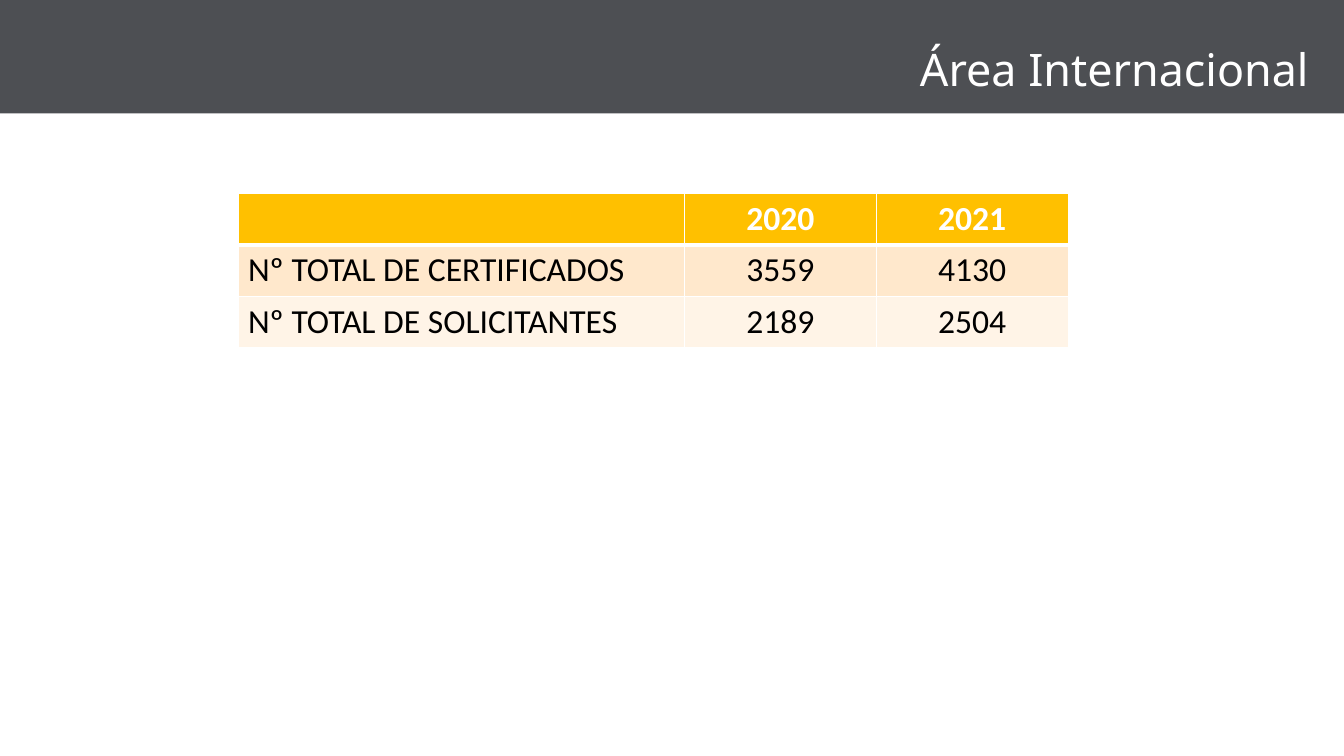
from pptx import Presentation
from pptx.dml.color import RGBColor
from pptx.enum.shapes import MSO_SHAPE as Shape
from pptx.enum.text import PP_ALIGN as Align
from pptx.oxml import parse_xml
from pptx.oxml.ns import nsdecls
from pptx.util import Pt


def color(code):
    return RGBColor.from_string(code)


def write(para, text, align, style):
    para.alignment = align
    run = para.add_run()
    run.text = text
    run.font.color.rgb = color(style["color"])
    for key in ("name", "size", "bold"):
        setattr(run.font, key, style[key])


deck = Presentation()
deck.slide_width, deck.slide_height = Pt(960), Pt(540)
slide = deck.slides.add_slide(deck.slide_layouts[6])
shapes = slide.shapes

# Header band
band = shapes.add_shape(Shape.RECTANGLE, 0, 0, Pt(960), Pt(81))
band.shadow.inherit = False
band.fill.solid()
band.fill.fore_color.rgb = color("4D4F53")
band.line.fill.background()

# Table of totals
rows = [
    ("", "2020", "2021"),
    ("Nº TOTAL DE CERTIFICADOS", "3559", "4130"),
    ("Nº TOTAL DE SOLICITANTES", "2189", "2504"),
]
fills = ["FFC000", "FFE8CC", "FFF4E7"]
widths = [319, 137, 137]
head = {"name": "Calibri", "size": Pt(24), "bold": True, "color": "FFFFFF"}
body = {**head, "bold": False, "color": "000000"}

table = shapes.add_table(3, 3, Pt(170), Pt(138.5), Pt(593), Pt(108)).table
for col, width in zip(table.columns, widths):
    col.width = Pt(width)

for r, (row, fill) in enumerate(zip(rows, fills)):
    table.rows[r].height = Pt(36)
    for c, text in enumerate(row):
        cell = table.cell(r, c)
        # White borders, thicker under the header row
        thick = {0: "lnB", 1: "lnT"}.get(r)
        props = cell._tc.get_or_add_tcPr()
        for side in ("lnL", "lnR", "lnT", "lnB"):
            size = Pt(3 if side == thick else 1)
            props.append(parse_xml(
                f'<a:{side} {nsdecls("a")} w="{size}"><a:solidFill>'
                f'<a:srgbClr val="FFFFFF"/></a:solidFill></a:{side}>'))
        cell.fill.solid()
        cell.fill.fore_color.rgb = color(fill)
        if text:
            write(cell.text_frame.paragraphs[0], text,
                  Align.CENTER if c else Align.LEFT, body if r else head)

# Title
box = shapes.add_textbox(Pt(633), Pt(26.5), Pt(309), Pt(46))
box.text_frame.word_wrap = True
title = {"name": "Noto Sans", "size": Pt(32), "bold": False, "color": "FFFFFF"}
write(box.text_frame.paragraphs[0], "Área Internacional", Align.RIGHT, title)

deck.save("out.pptx")
